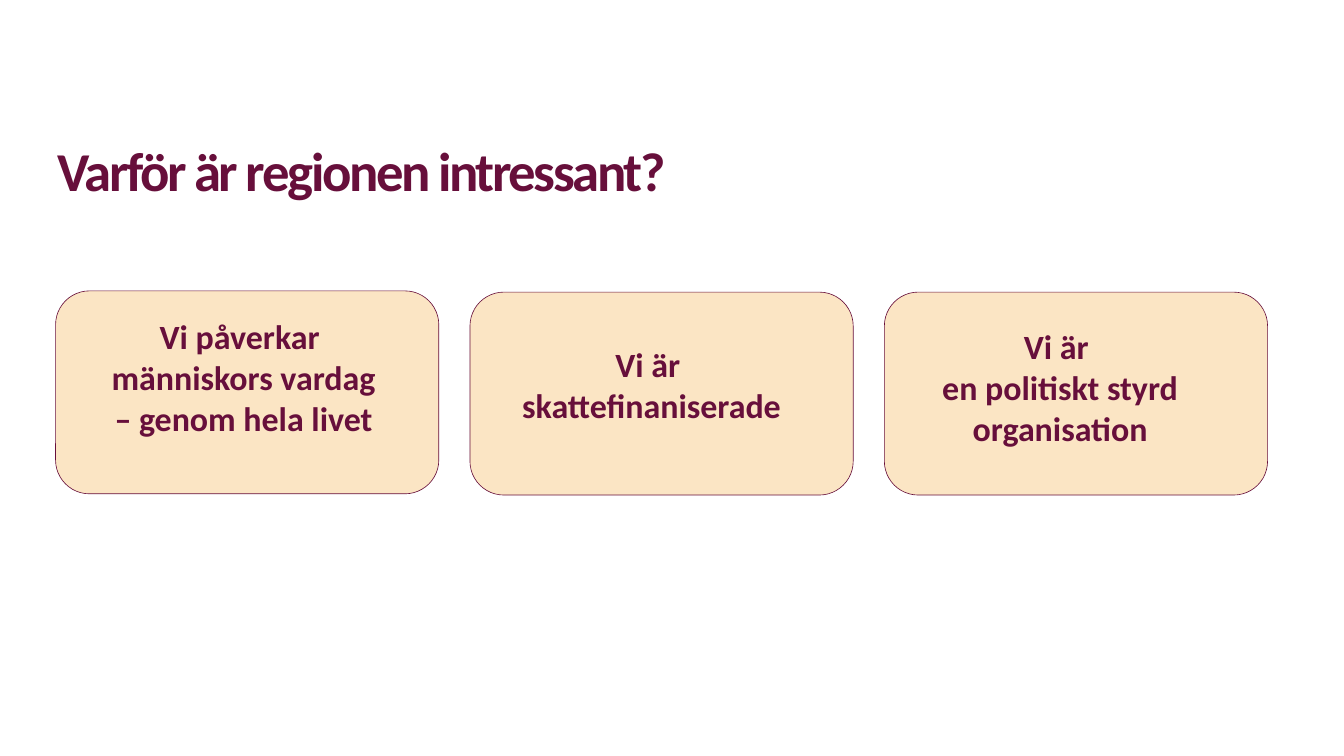
from pptx import Presentation
from pptx.dml.color import RGBColor
from pptx.enum.shapes import MSO_SHAPE
from pptx.enum.text import MSO_ANCHOR, PP_ALIGN
from pptx.oxml.ns import qn
from pptx.util import Inches, Pt
from lxml import etree

ROUNDED = MSO_SHAPE.ROUNDED_RECTANGLE
TOP, BOTTOM = MSO_ANCHOR.TOP, MSO_ANCHOR.BOTTOM
LEFT, CENTER = PP_ALIGN.LEFT, PP_ALIGN.CENTER
PLUM = RGBColor(0x67, 0x0F, 0x3B)
AMBER = RGBColor(0xF5, 0xAA, 0x3C)
FONT = "Calibri"

SLIDE_W, SLIDE_H = 21.99, 12.37
TITLE = "Varför är regionen intressant?"
TITLE_BOX = (0.94, 2.11, 19.27, 1.28)
CARD_X, CARD_W, CARD_H, CARD_GAP = 0.91, 6.27, 3.32, 0.51
CARDS = [
    (4.76, (0.2, 0.36, 5.75, 2.64), ["Vi påverkar \vmänniskors vardag\v– genom hela livet"]),
    (4.78, (0.08, 0.79, 5.78, 2.32), ["Vi är ", "skattefinaniserade"]),
    (4.78, (0, 0.5, 5.75, 1.65), ["Vi är ", "en politiskt styrd organisation"]),
]


def add_card(slide, x, y):
    sp = slide.shapes.add_shape(ROUNDED, *map(Inches, (x, y, CARD_W, CARD_H)))
    sp.shadow.inherit = False
    sp.fill.solid()
    sp.fill.fore_color.rgb = AMBER
    color = sp.fill._xPr.find(qn("a:solidFill"))[0]
    etree.SubElement(color, qn("a:alpha")).set("val", "30000")
    sp.line.color.rgb = PLUM
    sp.line.width = Pt(0.75)


def add_text(slide, box, lines, size, align, anchor):
    tf = slide.shapes.add_textbox(*map(Inches, box)).text_frame
    tf.word_wrap = True
    tf.vertical_anchor = anchor
    tf.text = "\n".join(lines)
    for p in tf.paragraphs:
        p.alignment = align
        for r in p.runs:
            r.font.name = FONT
            r.font.size = Pt(size)
            r.font.bold = True
            r.font.color.rgb = PLUM
    return tf


prs = Presentation()
prs.slide_width, prs.slide_height = Inches(SLIDE_W), Inches(SLIDE_H)
s = prs.slides.add_slide(prs.slide_layouts[6])

tf = add_text(s, TITLE_BOX, [TITLE], 64.5, LEFT, BOTTOM)
tf.margin_left = tf.margin_right = tf.margin_top = 0
tf.margin_bottom = Inches(0.08)
p = tf.paragraphs[0]
p.line_spacing = 0.85
p.runs[0].font._element.set("spc", "-280")

for i, (y, (dx, dy, w, h), lines) in enumerate(CARDS):
    x = CARD_X + i * (CARD_W + CARD_GAP)
    add_card(s, x, y)
    add_text(s, (x + dx, y + dy, w, h), lines, 40, CENTER, TOP)

prs.save("out.pptx")
